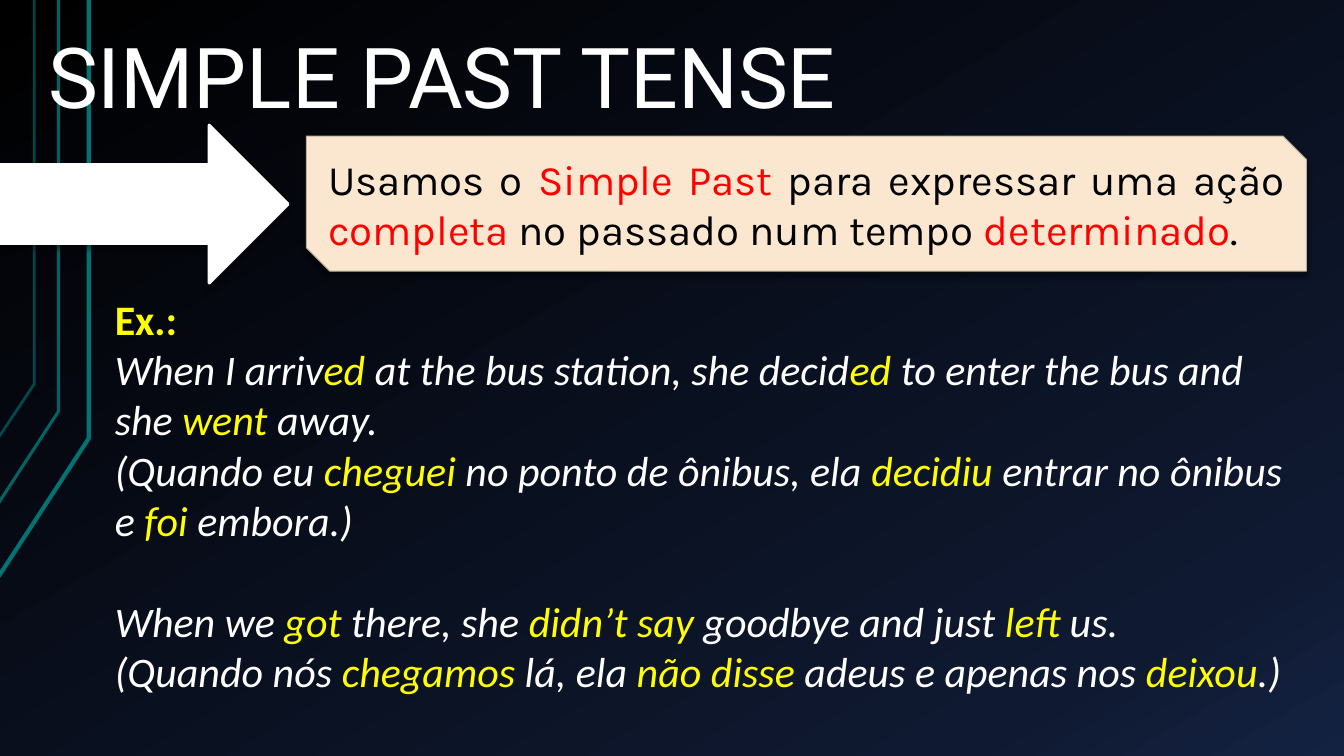
from copy import deepcopy
from dataclasses import dataclass

from lxml.etree import SubElement
from pptx import Presentation
from pptx.dml.color import RGBColor
from pptx.enum.shapes import MSO_SHAPE
from pptx.enum.text import MSO_ANCHOR, PP_ALIGN
from pptx.oxml.ns import qn
from pptx.util import Pt


@dataclass(frozen=True)
class Theme:
    white: RGBColor = RGBColor(0xFF, 0xFF, 0xFF)
    black: RGBColor = RGBColor(0x00, 0x00, 0x00)
    navy: RGBColor = RGBColor(0x0F, 0x19, 0x31)
    blue: RGBColor = RGBColor(0x14, 0x22, 0x42)
    teal: RGBColor = RGBColor(0x00, 0x73, 0x73)
    cream: RGBColor = RGBColor(0xFB, 0xE7, 0xD0)
    sand: RGBColor = RGBColor(0xBB, 0xB2, 0x9B)
    red: RGBColor = RGBColor(0xFF, 0x00, 0x00)
    yellow: RGBColor = RGBColor(0xFF, 0xFF, 0x00)
    title_size: int = 60
    body_size: int = 30
    title_font: str = "Roboto"
    rule_font: str = "Karla"
    example_font: str = "Calibri"


THEME = Theme()

# Plain and highlighted pieces alternate, starting with plain
RULE = ["Usamos o ", "Simple Past ", "para expressar uma ação ", "completa",
        " no passado num tempo ", "determinado", "."]
EXAMPLES = [
    [
        ["When I arriv", "ed ", "at the bus station, she decid", "ed ",
         "to enter the bus and she ", "went ", "away."],
        ["(Quando eu ", "cheguei", " no ponto de ônibus, ela ", "decidiu",
         " entrar no ônibus e ", "foi", " embora.)"],
    ],
    [
        ["When we ", "got", " there, she ", "didn’t say",
         " goodbye and just ", "left ", "us."],
        ["(Quando nós ", "chegamos ", "lá, ela ", "não disse ",
         "adeus e apenas nos ", "deixou", ".)"],
    ],
]

# Corner x, corner y, left end y, line width, opacity
CIRCUIT_LINES = [
    (63.4, 313.2, 411.8, 3, 100),
    (41.8, 293.8, 359.3, 2.25, 85),
    (24.5, 274.3, 312.5, 2, 60),
]


def paint_background(page):
    fill = page.background.fill
    fill.gradient()
    fill.gradient_angle = 300
    last_stop = list(page.element.iter(qn("a:gs")))[-1]
    last_stop.addprevious(deepcopy(last_stop))
    stops = [(0, THEME.black), (0.85, THEME.navy), (1, THEME.blue)]
    for stop, (position, color) in zip(fill.gradient_stops, stops):
        stop.position = position
        stop.color.rgb = color


def add_circuit_line(page, corner_x, corner_y, end_y, width, opacity):
    builder = page.shapes.build_freeform(Pt(-1), Pt(end_y))
    builder.add_line_segments(
        [(Pt(corner_x), Pt(corner_y)), (Pt(corner_x), Pt(0))], close=False)
    line = builder.convert_to_shape()
    line.shadow.inherit = False
    line.fill.background()
    line.line.color.rgb = THEME.teal
    line.line.width = Pt(width)
    color = next(line.line._ln.iter(qn("a:srgbClr")))
    SubElement(color, qn("a:alpha"), val=str(opacity * 1000))


def add_panel(page, kind, left, top, width, height, fill, outline, line_width):
    panel = page.shapes.add_shape(kind, Pt(left), Pt(top), Pt(width), Pt(height))
    panel.fill.solid()
    panel.fill.fore_color.rgb = fill
    panel.line.color.rgb = outline
    panel.line.width = Pt(line_width)
    # Soft shadow straight below
    panel.shadow.inherit = False
    effects = panel._element.spPr.find(qn("a:effectLst"))
    shadow = SubElement(effects, qn("a:outerShdw"), blurRad=str(Pt(4)),
                        dist=str(Pt(3)), dir="5400000", rotWithShape="0")
    color = SubElement(shadow, qn("a:srgbClr"), val=str(THEME.black))
    SubElement(color, qn("a:alpha"), val="40000")
    return panel


def add_text_box(page, left, top, width, height, wrap=True):
    box = page.shapes.add_textbox(Pt(left), Pt(top), Pt(width), Pt(height))
    box.text_frame.word_wrap = wrap
    return box.text_frame


def add_span(para, text, font, size, color, bold=False, italic=False):
    span = para.add_run()
    span.text = text
    span.font.name = font
    span.font.size = Pt(size)
    span.font.color.rgb = color
    span.font.bold = bold
    span.font.italic = italic


def add_highlighted(para, pieces, font, plain, accent, italic=False):
    for index, text in enumerate(pieces):
        color = accent if index % 2 else plain
        add_span(para, text, font, THEME.body_size, color, italic=italic)


def add_title(page):
    frame = add_text_box(page, 15.1, 13.7, 601.2, 79.9, wrap=False)
    para = frame.paragraphs[0]
    para.alignment = PP_ALIGN.CENTER
    add_span(para, "SIMPLE PAST TENSE", THEME.title_font,
             THEME.title_size, THEME.white)


def add_rule(page):
    panel = add_panel(page, MSO_SHAPE.SNIP_2_DIAG_RECTANGLE, 218.9, 97.2,
                      714.2, 96.5, THEME.cream, THEME.sand, 0.75)
    panel.adjustments[0] = 0
    panel.adjustments[1] = 0.173
    frame = panel.text_frame
    frame.word_wrap = True
    frame.vertical_anchor = MSO_ANCHOR.MIDDLE
    para = frame.paragraphs[0]
    para.alignment = PP_ALIGN.JUSTIFY
    add_highlighted(para, RULE, THEME.rule_font, THEME.black, THEME.red)


def add_examples(page):
    frame = add_text_box(page, 74.9, 205.9, 856.1, 298.1)
    add_span(frame.paragraphs[0], "Ex.:", THEME.example_font,
             THEME.body_size, THEME.yellow, bold=True)
    for group_index, group in enumerate(EXAMPLES):
        for line_index, pieces in enumerate(group):
            para = frame.add_paragraph()
            if group_index and line_index == 0:
                para.space_before = Pt(36)
            add_highlighted(para, pieces, THEME.example_font,
                            THEME.white, THEME.yellow, italic=True)


def main():
    deck = Presentation()
    deck.slide_width, deck.slide_height = Pt(960), Pt(540)
    page = deck.slides.add_slide(deck.slide_layouts[6])

    # Backdrop
    paint_background(page)
    for circuit_line in CIRCUIT_LINES:
        add_circuit_line(page, *circuit_line)

    # Title, pointer, rule and examples
    add_title(page)
    add_panel(page, MSO_SHAPE.RIGHT_ARROW, 0, 89.3, 205.9, 113,
              THEME.white, THEME.white, 2)
    add_rule(page)
    add_examples(page)

    deck.save("out.pptx")


if __name__ == "__main__":
    main()
